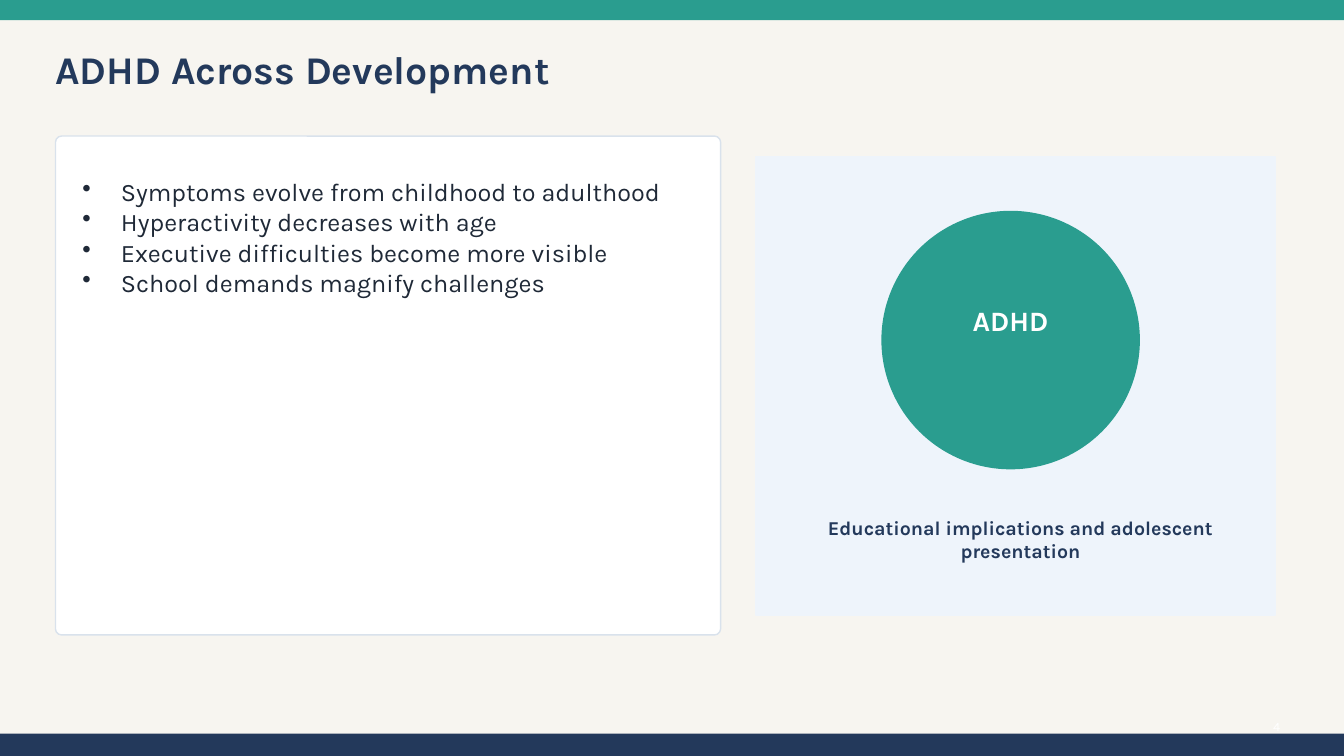
import pptx
import pptx.dml.color
import pptx.enum.shapes
import pptx.enum.text
import pptx.oxml.ns
import pptx.util
from lxml import etree

Cm = pptx.util.Cm
Pt = pptx.util.Pt
Shape = pptx.enum.shapes.MSO_SHAPE
Align = pptx.enum.text.PP_ALIGN
Anchor = pptx.enum.text.MSO_ANCHOR

TITLE = "ADHD Across Development"
POINTS = [
    "Symptoms evolve from childhood to adulthood",
    "Hyperactivity decreases with age",
    "Executive difficulties become more visible",
    "School demands magnify challenges",
]
TOPIC = "ADHD"
CAPTION = "Educational implications and adolescent presentation"
PAGE = "4"

FONT = "Karla"
COLORS = {
    "cream": "F7F5F0",
    "teal": "2A9D8F",
    "navy": "23395B",
    "white": "FFFFFF",
    "border": "D9E2EC",
    "panel": "EEF4FB",
    "ink": "1F2937",
}
WIDTH, HEIGHT = 33.87, 19.05
MARGIN = 1.4
TOP_BAR, BOTTOM_BAR = 0.51, 0.56
INDENT = 0.97
CIRCLE_LEFT, CIRCLE_TOP, CIRCLE_SIZE = 22.23, 5.33, 6.48
LABEL_INSET = 0.51


def color(name):
    return pptx.dml.color.RGBColor.from_string(COLORS[name])


def add_block(slide, kind, box, fill, line=None):
    shape = slide.shapes.add_shape(kind, *map(Cm, box))
    shape.shadow.inherit = False
    shape.fill.solid()
    shape.fill.fore_color.rgb = color(fill)
    if line:
        shape.line.color.rgb = color(line)
        shape.line.width = Pt(1)
    else:
        shape.line.fill.background()
    return shape


def add_bullet(paragraph):
    properties = paragraph._p.get_or_add_pPr()
    properties.set("marL", str(Cm(INDENT)))
    properties.set("indent", str(-Cm(INDENT)))
    bullet = etree.SubElement(properties, pptx.oxml.ns.qn("a:buChar"))
    bullet.set("char", "•")


def add_text(slide, box, lines, size, ink, bold=False,
             align=Align.LEFT, anchor=Anchor.MIDDLE, bullets=False):
    frame = slide.shapes.add_textbox(*map(Cm, box)).text_frame
    frame.word_wrap = True
    frame.vertical_anchor = anchor
    frame.margin_left = frame.margin_right = 0
    frame.margin_top = frame.margin_bottom = 0
    for index, line in enumerate(lines):
        paragraph = frame.add_paragraph() if index else frame.paragraphs[0]
        paragraph.alignment = align
        if bullets:
            add_bullet(paragraph)
        run = paragraph.add_run()
        run.text = line
        run.font.name = FONT
        run.font.size = Pt(size)
        run.font.bold = bold
        run.font.color.rgb = color(ink)


def main():
    presentation = pptx.Presentation()
    presentation.slide_width = Cm(WIDTH)
    presentation.slide_height = Cm(HEIGHT)
    slide = presentation.slides.add_slide(presentation.slide_layouts[6])
    slide.background.fill.solid()
    slide.background.fill.fore_color.rgb = color("cream")

    add_block(slide, Shape.RECTANGLE, (0, 0, WIDTH, TOP_BAR), "teal")
    add_block(slide, Shape.RECTANGLE,
              (0, HEIGHT - BOTTOM_BAR, WIDTH, BOTTOM_BAR), "navy")
    add_text(slide, (31.37, 18.08, 0.89, 0.46), [PAGE], 9, "white",
             align=Align.RIGHT)
    add_text(slide, (MARGIN, 0.97, 22.35, 1.52), [TITLE], 28, "navy", bold=True)

    card = add_block(slide, Shape.ROUNDED_RECTANGLE,
                     (MARGIN, 3.43, 16.76, 12.57), "white", "border")
    card.adjustments[0] = 0.012
    add_text(slide, (2.08, 4.45, 15.11, 10.8), POINTS, 18, "ink",
             anchor=Anchor.TOP, bullets=True)

    add_block(slide, Shape.RECTANGLE, (19.05, 3.94, 13.08, 11.56), "panel", "panel")
    add_block(slide, Shape.OVAL,
              (CIRCLE_LEFT, CIRCLE_TOP, CIRCLE_SIZE, CIRCLE_SIZE), "teal", "teal")
    add_text(slide,
             (CIRCLE_LEFT + LABEL_INSET, 7.49, CIRCLE_SIZE - 2 * LABEL_INSET, 1.14),
             [TOPIC], 20, "white", bold=True, align=Align.CENTER)
    add_text(slide, (20.32, 12.7, 10.8, 1.78), [CAPTION], 14, "navy",
             bold=True, align=Align.CENTER)

    presentation.save("out.pptx")


if __name__ == "__main__":
    main()
